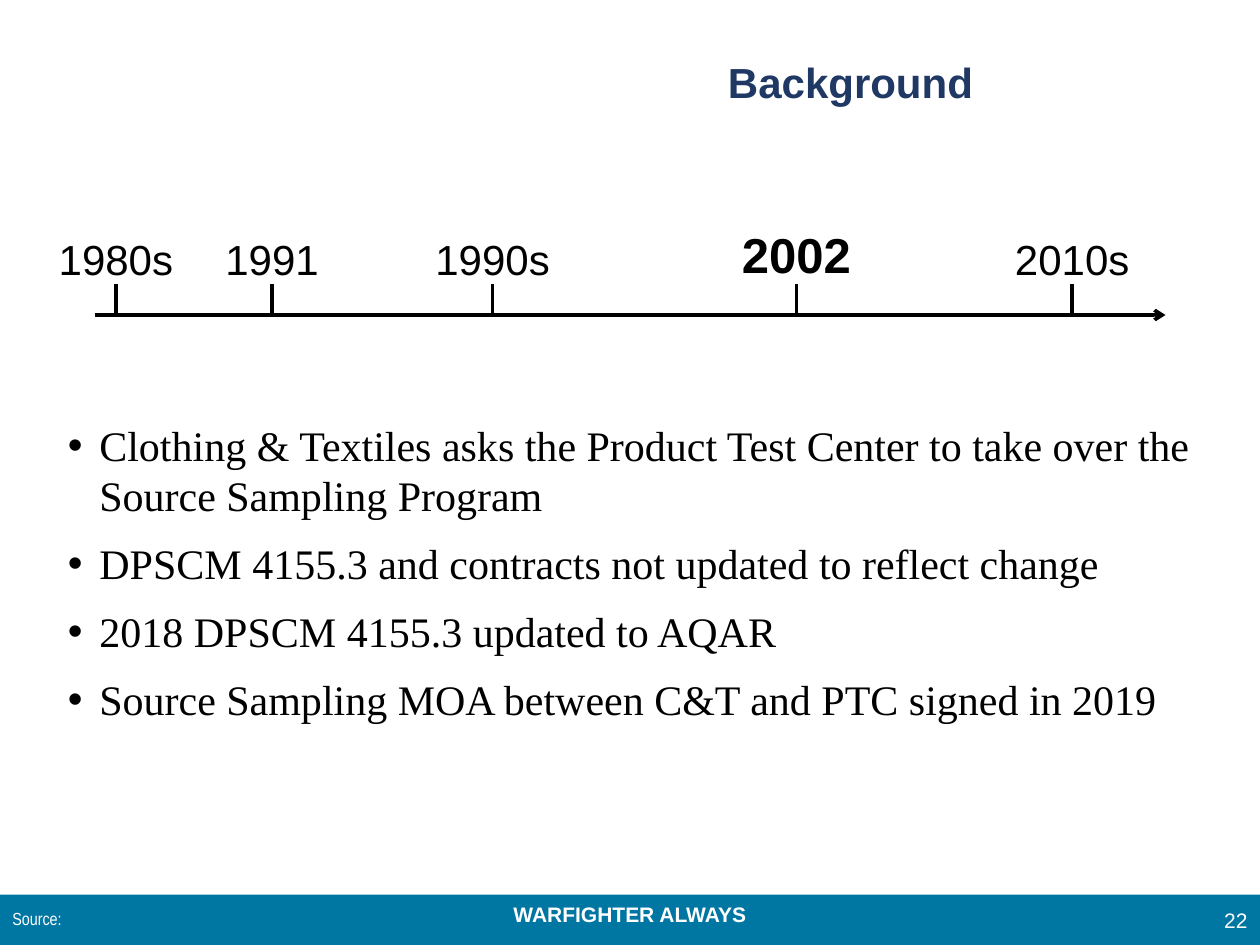
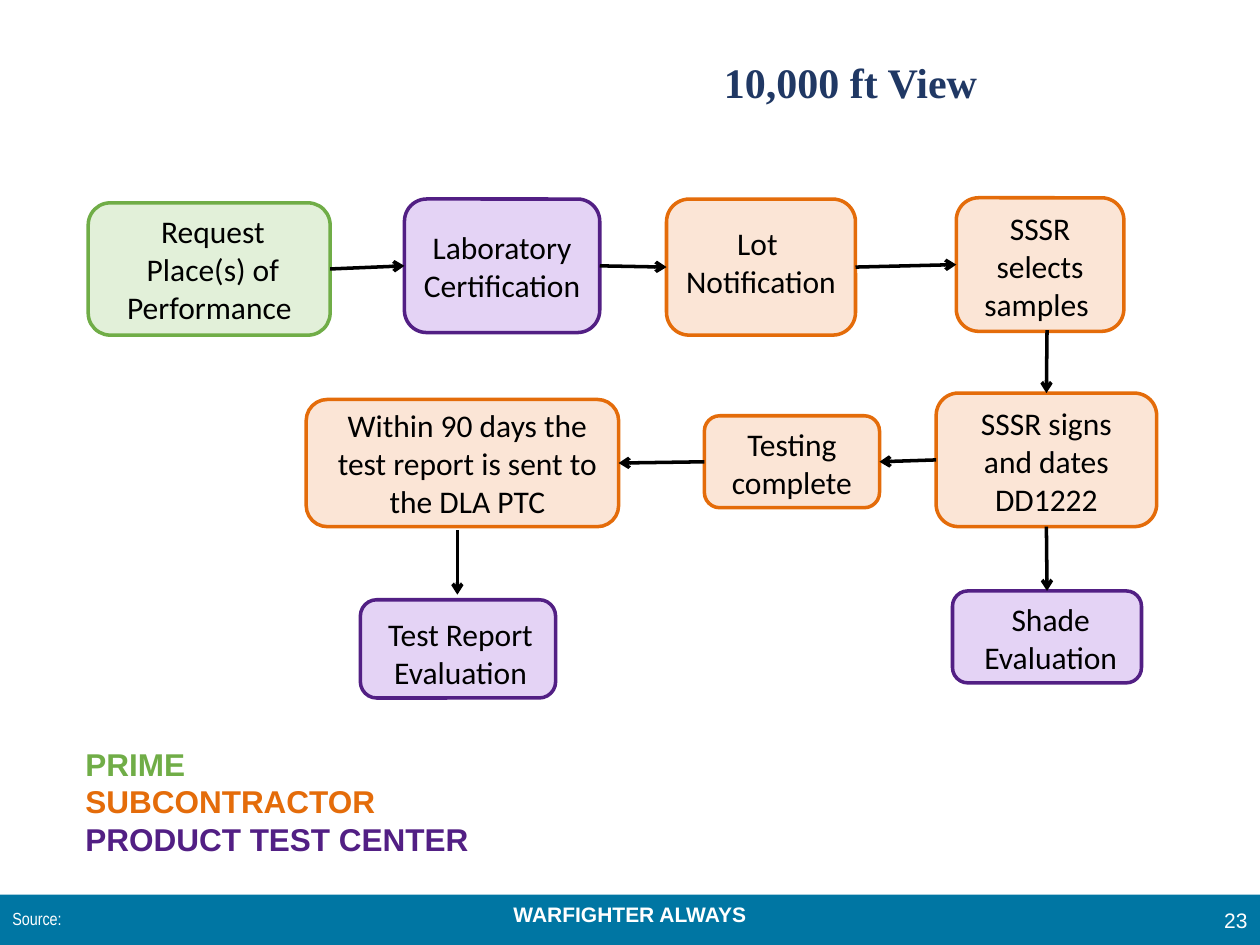
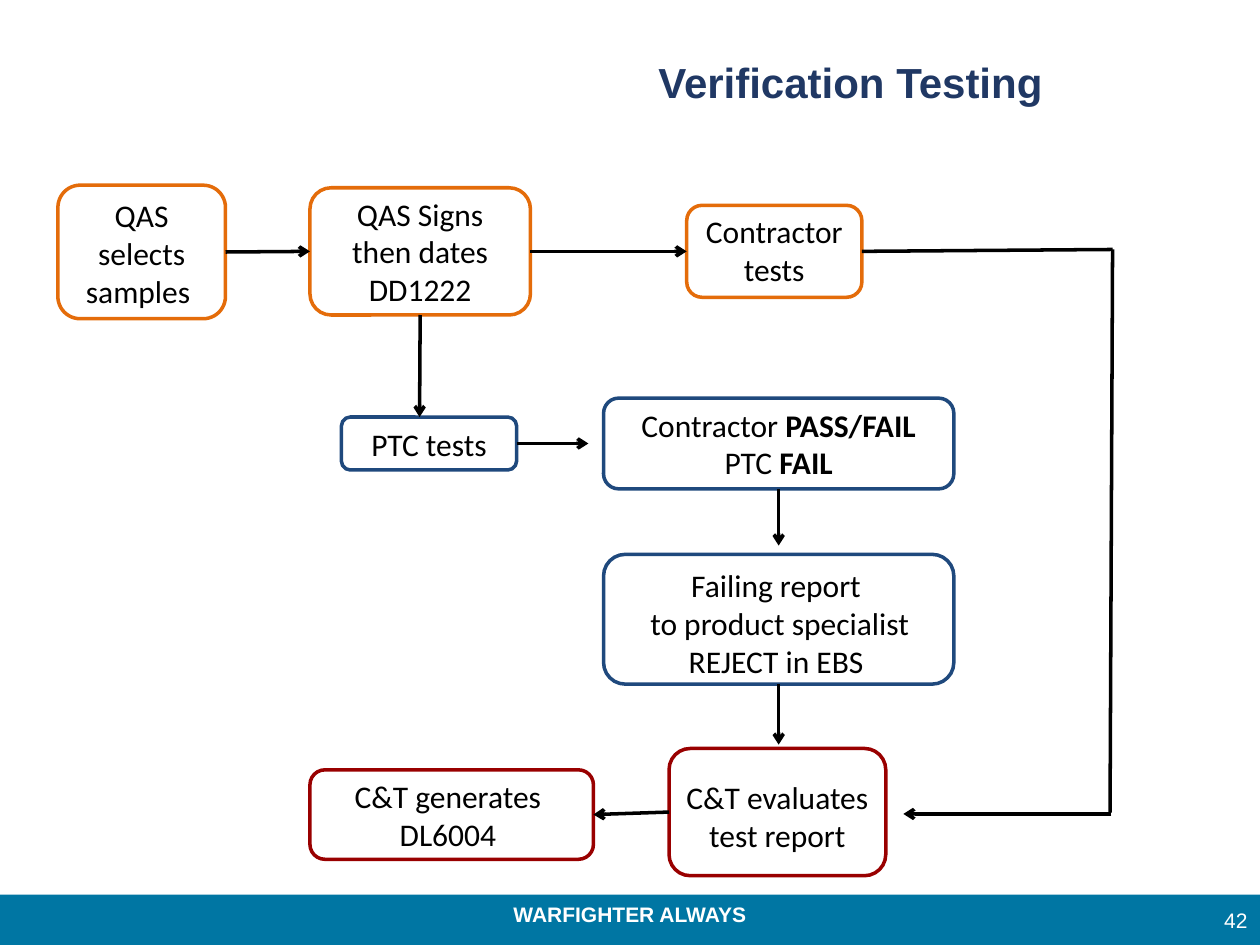
"""Build three slides on source sampling: a timeline and two process flows."""
from dataclasses import dataclass
from typing import NamedTuple, Union

from lxml import etree
from pptx import Presentation
from pptx.dml.color import RGBColor
from pptx.enum.shapes import MSO_CONNECTOR, MSO_SHAPE
from pptx.enum.text import MSO_ANCHOR, PP_ALIGN
from pptx.oxml.ns import qn
from pptx.shapes.autoshape import Shape
from pptx.slide import Slide
from pptx.text.text import TextFrame
from pptx.util import Pt

LEFT, CENTER, RIGHT = PP_ALIGN.LEFT, PP_ALIGN.CENTER, PP_ALIGN.RIGHT
TOP, MIDDLE, BOTTOM = MSO_ANCHOR.TOP, MSO_ANCHOR.MIDDLE, MSO_ANCHOR.BOTTOM
STRAIGHT = MSO_CONNECTOR.STRAIGHT
RECTANGLE = MSO_SHAPE.RECTANGLE
STEP_SHAPE = MSO_SHAPE.FLOWCHART_ALTERNATE_PROCESS
SIDE_TOP, SIDE_LEFT, SIDE_BOTTOM, SIDE_RIGHT = range(4)
EMU_PER_PX = 9144


@dataclass(frozen=True)
class Theme:
    """Colours, fonts and type sizes shared by the slides."""
    band: str = "0076A3"
    title: str = "203864"
    ink: str = "000000"
    white: str = "FFFFFF"
    prime: str = "70AD47"
    prime_fill: str = "E2F0D9"
    subcontractor: str = "E46C0A"
    subcontractor_fill: str = "FBE5D6"
    test_center: str = "521F84"
    test_center_fill: str = "E4D3F5"
    laboratory: str = "1F497D"
    evaluation: str = "990000"
    sans: str = "Arial"
    narrow: str = "Arial Narrow"
    serif: str = "Times New Roman"
    step_font: str = "Calibri"
    large: int = 24
    emphasis: int = 28
    step_size: int = 18
    footer: int = 12
    source: int = 10
    line: int = 2


THEME = Theme()


class Box(NamedTuple):
    """A rectangle in px."""
    left: int
    top: int
    width: int
    height: int


class Point(NamedTuple):
    """A free line end in px."""
    x: int
    y: int


class Port(NamedTuple):
    """A line end at the middle of a step's side."""
    step: str
    side: int


class Role(NamedTuple):
    """The outline and fill of the party that does a step."""
    outline: str
    fill: str | None = None


class Milestone(NamedTuple):
    """A date on the timeline."""
    label: str
    x: int
    current: bool = False


@dataclass(frozen=True)
class Step:
    """A labelled box in a process flow."""
    name: str
    box: Box
    role: Role
    text: str
    margin: int = 5
    shift_x: int = 0
    shift_y: int = 0


End = Union[Point, Port]


@dataclass(frozen=True)
class Link:
    """A line between two ends."""
    begin: End
    end: End
    arrow: bool = True


PRIME = Role(THEME.prime, THEME.prime_fill)
SUBCONTRACTOR = Role(THEME.subcontractor, THEME.subcontractor_fill)
TEST_CENTER = Role(THEME.test_center, THEME.test_center_fill)
CONTRACTOR = Role(THEME.subcontractor)
LABORATORY = Role(THEME.laboratory)
EVALUATION = Role(THEME.evaluation)

MILESTONES = (
    Milestone("1980s", 92),
    Milestone("1991", 216),
    Milestone("1990s", 391),
    Milestone("2002", 632, current=True),
    Milestone("2010s", 851),
)

BACKGROUND_POINTS = (
    "Clothing & Textiles asks the Product Test Center to take over the Source Sampling Program",
    "DPSCM 4155.3 and contracts not updated to reflect change",
    "2018 DPSCM 4155.3 updated to AQAR",
    "Source Sampling MOA between C&T and PTC signed in 2019",
)

LEGEND = (
    ("PRIME", THEME.prime),
    ("SUBCONTRACTOR", THEME.subcontractor),
    ("PRODUCT TEST CENTER", THEME.test_center),
)

OVERVIEW_STEPS = (
    Step("request", Box(70, 161, 192, 105), PRIME,
         "Request\nPlace(s) of Performance ", shift_x=3),
    Step("certification", Box(321, 158, 155, 106), TEST_CENTER, "Laboratory Certification"),
    Step("lot", Box(529, 158, 150, 108), SUBCONTRACTOR, "Lot \nNotification", shift_y=-4),
    Step("select", Box(759, 157, 133, 106), SUBCONTRACTOR, "SSSR\nselects samples ", shift_y=1),
    Step("sign", Box(743, 312, 175, 106), SUBCONTRACTOR,
         "SSSR signs and dates DD1222", margin=14, shift_y=1),
    Step("testing", Box(559, 330, 139, 73), SUBCONTRACTOR, "Testing complete", shift_y=1),
    Step("report", Box(243, 317, 248, 101), SUBCONTRACTOR,
         "Within 90 days the test report is sent to the DLA PTC", shift_x=4),
    Step("report evaluation", Box(286, 476, 155, 78), TEST_CENTER,
         "Test Report Evaluation", shift_x=2, shift_y=3),
    Step("shade", Box(756, 469, 150, 73), TEST_CENTER,
         "Shade Evaluation", shift_x=3, shift_y=1),
)

OVERVIEW_LINKS = (
    Link(Port("request", SIDE_RIGHT), Port("certification", SIDE_LEFT)),
    Link(Port("certification", SIDE_RIGHT), Port("lot", SIDE_LEFT)),
    Link(Port("lot", SIDE_RIGHT), Port("select", SIDE_LEFT)),
    Link(Point(831, 262), Port("sign", SIDE_TOP)),
    Link(Port("sign", SIDE_LEFT), Port("testing", SIDE_RIGHT)),
    Link(Port("testing", SIDE_LEFT), Port("report", SIDE_RIGHT)),
    Link(Port("sign", SIDE_BOTTOM), Port("shade", SIDE_TOP)),
    Link(Point(363, 421), Point(363, 472)),
)

VERIFICATION_STEPS = (
    Step("select", Box(46, 147, 133, 106), CONTRACTOR,
         "QAS selects samples ", margin=10, shift_y=1),
    Step("sign", Box(246, 149, 175, 101), CONTRACTOR, "QAS Signs then dates DD1222", margin=14),
    Step("contractor", Box(545, 163, 139, 73), CONTRACTOR, "Contractor tests", shift_y=-1),
    Step("laboratory", Box(271, 331, 139, 42), LABORATORY, "PTC tests"),
    Step("results", Box(479, 316, 278, 72), LABORATORY,
         "Contractor **PASS/FAIL**\nPTC **FAIL**"),
    Step("failing", Box(479, 440, 278, 103), LABORATORY,
         "Failing report\n to product specialist REJECT in EBS", shift_x=-2, shift_y=3),
    Step("evaluate", Box(531, 594, 172, 101), EVALUATION, "C&T evaluates test report", shift_y=3),
    Step("generate", Box(246, 611, 225, 71), EVALUATION, "C&T generates DL6004", shift_x=-3),
)

VERIFICATION_LINKS = (
    Link(Port("select", SIDE_RIGHT), Port("sign", SIDE_LEFT)),
    Link(Port("sign", SIDE_RIGHT), Port("contractor", SIDE_LEFT)),
    Link(Port("sign", SIDE_BOTTOM), Point(333, 331)),
    Link(Port("laboratory", SIDE_RIGHT), Point(467, 352)),
    Link(Port("results", SIDE_BOTTOM), Point(618, 433)),
    Link(Port("failing", SIDE_BOTTOM), Point(618, 591)),
    Link(Port("evaluate", SIDE_LEFT), Port("generate", SIDE_RIGHT)),
    Link(Port("contractor", SIDE_RIGHT), Point(883, 198), arrow=False),
    Link(Point(883, 198), Point(881, 645), arrow=False),
    Link(Point(882, 646), Point(717, 646)),
)


def px(length: int) -> int:
    """Turn px into EMU."""
    return length * EMU_PER_PX


def rgb(color: str) -> RGBColor:
    """Turn a hex string into a colour."""
    return RGBColor.from_string(color)


def write(frame: TextFrame, text: str, *, size: int, font: str = THEME.sans,
          color: str = THEME.ink, bold: bool = False, align: PP_ALIGN = LEFT,
          line_spacing: float | None = None, space_before: int = 0,
          bullet_indent: int = 0) -> None:
    """Add one paragraph per line of text, with ** around bold parts."""
    for line in text.split("\n"):
        is_first = not frame.text
        paragraph = frame.paragraphs[0] if is_first else frame.add_paragraph()
        paragraph.alignment = align
        paragraph.space_before = Pt(0 if is_first else space_before)
        if line_spacing:
            paragraph.line_spacing = line_spacing
        if bullet_indent:
            properties = paragraph._p.get_or_add_pPr()
            properties.set("marL", str(px(bullet_indent)))
            properties.set("indent", str(-px(bullet_indent)))
            etree.SubElement(properties, qn("a:buFont")).set("typeface", THEME.sans)
            etree.SubElement(properties, qn("a:buChar")).set("char", "•")
        for index, part in enumerate(line.split("**")):
            if part:
                run = paragraph.add_run()
                run.text = part
                run.font.name = font
                run.font.size = Pt(size)
                run.font.bold = bold or index % 2 == 1
                run.font.color.rgb = rgb(color)


def add_frame(slide: Slide, box: Box, anchor: MSO_ANCHOR = TOP, wrap: bool = True) -> TextFrame:
    """Add a text box and return its frame."""
    frame = slide.shapes.add_textbox(*map(px, box)).text_frame
    frame.word_wrap = wrap
    frame.vertical_anchor = anchor
    return frame


def add_box(slide: Slide, kind: MSO_SHAPE, box: Box, fill: str | None,
            outline: str | None = None) -> Shape:
    """Add a preset shape without a shadow."""
    shape = slide.shapes.add_shape(kind, *map(px, box))
    shape.shadow.inherit = False
    if fill:
        shape.fill.solid()
        shape.fill.fore_color.rgb = rgb(fill)
    else:
        shape.fill.background()
    if outline:
        shape.line.color.rgb = rgb(outline)
        shape.line.width = Pt(THEME.line)
    else:
        shape.line.fill.background()
    return shape


def add_step(slide: Slide, step: Step) -> Shape:
    """Draw a step with its label inside."""
    shape = add_box(slide, STEP_SHAPE, step.box, step.role.fill, step.role.outline)
    frame = shape.text_frame
    frame.word_wrap = True
    frame.vertical_anchor = MIDDLE
    frame.margin_left = px(step.margin + 2 * max(step.shift_x, 0))
    frame.margin_right = px(step.margin + 2 * max(-step.shift_x, 0))
    frame.margin_top = px(2 * max(step.shift_y, 0))
    frame.margin_bottom = px(2 * max(-step.shift_y, 0))
    write(frame, step.text, size=THEME.step_size, font=THEME.step_font, align=CENTER)
    return shape


def add_link(slide: Slide, link: Link, shapes: dict[str, Shape]) -> None:
    """Draw a line and join its ends to steps where it has ports."""
    begin, end = (Point(0, 0) if isinstance(place, Port) else place
                  for place in (link.begin, link.end))
    connector = slide.shapes.add_connector(STRAIGHT, *map(px, (*begin, *end)))
    if isinstance(link.begin, Port):
        connector.begin_connect(shapes[link.begin.step], link.begin.side)
    if isinstance(link.end, Port):
        connector.end_connect(shapes[link.end.step], link.end.side)
    connector.line.color.rgb = rgb(THEME.ink)
    connector.line.width = Pt(THEME.line)
    if link.arrow:
        etree.SubElement(connector.line._get_or_add_ln(), qn("a:tailEnd")).set("type", "arrow")
    etree.SubElement(connector._element.spPr, qn("a:effectLst"))


def add_flow(slide: Slide, steps: tuple[Step, ...], links: tuple[Link, ...]) -> None:
    """Draw the steps of a process and the lines between them."""
    shapes = {step.name: add_step(slide, step) for step in steps}
    for link in links:
        add_link(slide, link, shapes)


def add_base(presentation: Presentation, title: str, number: int,
             title_font: str = THEME.sans, source: str = "") -> Slide:
    """Add a slide with its title, footer band and number."""
    slide = presentation.slides.add_slide(presentation.slide_layouts[6])
    add_box(slide, RECTANGLE, Box(0, 710, 1000, 40), THEME.band)
    write(add_frame(slide, Box(0, 711, 1000, 30)), "WARFIGHTER ALWAYS",
          size=THEME.footer, color=THEME.white, bold=True, align=CENTER)
    write(add_frame(slide, Box(400, 40, 550, 90)), title, size=THEME.large,
          font=title_font, color=THEME.title, bold=True, align=CENTER)
    write(add_frame(slide, Box(950, 710, 50, 40), MIDDLE), str(number),
          size=THEME.footer, color=THEME.white, align=RIGHT)
    if source:
        write(add_frame(slide, Box(0, 710, 381, 40), MIDDLE), source, size=THEME.source,
              font=THEME.narrow, color=THEME.white, line_spacing=0.9)
    return slide


def add_timeline(slide: Slide, axis_y: int) -> None:
    """Draw the time axis with a tick and a label per milestone."""
    add_link(slide, Link(Point(75, axis_y), Point(925, axis_y)), {})
    for milestone in MILESTONES:
        tick = Link(Point(milestone.x, axis_y), Point(milestone.x, axis_y - 25), arrow=False)
        add_link(slide, tick, {})
        frame = add_frame(slide, Box(milestone.x - 60, axis_y - 70, 120, 50), BOTTOM, wrap=False)
        write(frame, milestone.label, bold=milestone.current, align=CENTER,
              size=THEME.emphasis if milestone.current else THEME.large)


def build_background(presentation: Presentation) -> None:
    """Build the timeline slide."""
    slide = add_base(presentation, "Background", 22, source="Source:")
    add_timeline(slide, 250)
    write(add_frame(slide, Box(44, 328, 912, 349)), "\n".join(BACKGROUND_POINTS),
          size=THEME.large, font=THEME.serif, space_before=10, bullet_indent=25)


def build_overview(presentation: Presentation) -> None:
    """Build the process overview slide with its legend."""
    slide = add_base(presentation, "10,000 ft View", 23, THEME.serif, "Source:")
    add_flow(slide, OVERVIEW_STEPS, OVERVIEW_LINKS)
    legend = add_frame(slide, Box(58, 586, 327, 131), wrap=False)
    for label, color in LEGEND:
        write(legend, label, size=THEME.step_size, color=color, bold=True)


def build_verification(presentation: Presentation) -> None:
    """Build the verification testing slide."""
    slide = add_base(presentation, "Verification Testing", 42)
    add_flow(slide, VERIFICATION_STEPS, VERIFICATION_LINKS)


def main() -> None:
    """Build and save the presentation."""
    presentation = Presentation()
    presentation.slide_width, presentation.slide_height = px(1000), px(750)
    build_background(presentation)
    build_overview(presentation)
    build_verification(presentation)
    presentation.save("out.pptx")


if __name__ == "__main__":
    main()
